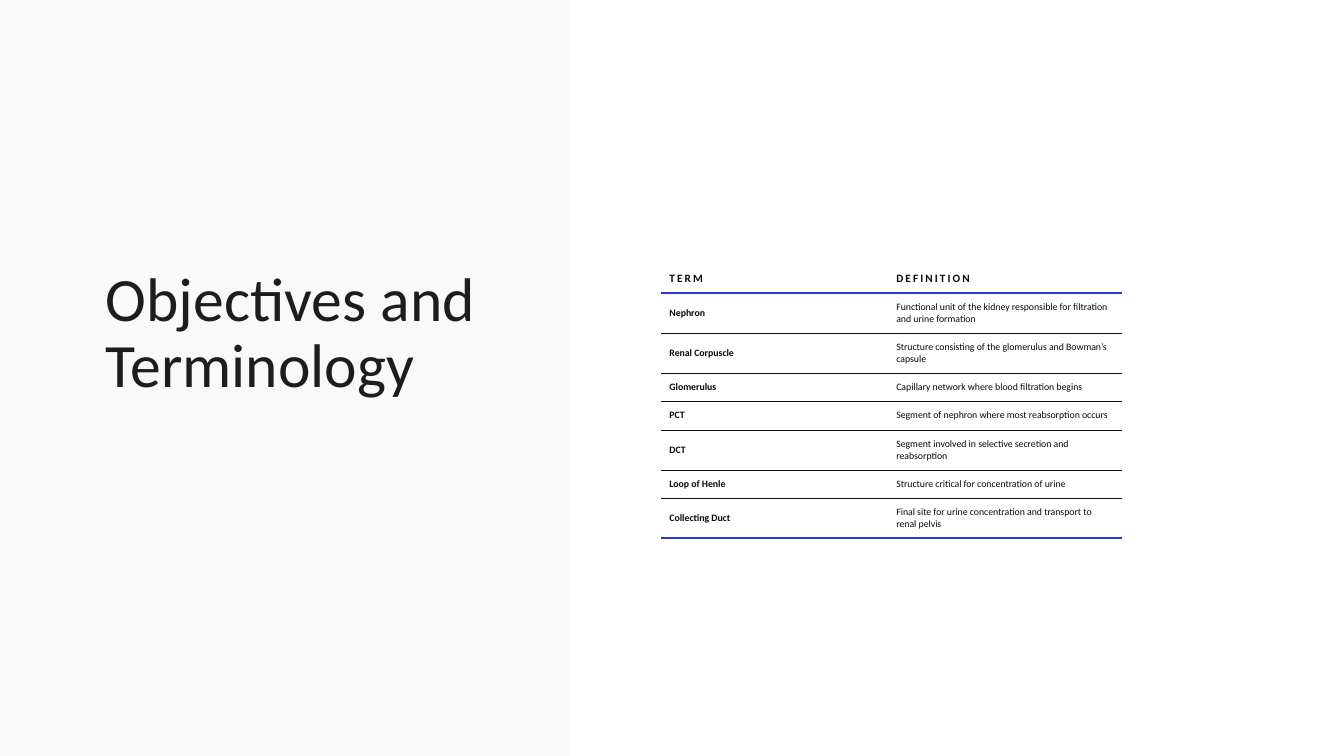
from lxml.etree import SubElement
from pptx import Presentation
from pptx.dml.color import RGBColor
from pptx.enum.shapes import MSO_SHAPE
from pptx.enum.text import MSO_ANCHOR, MSO_AUTO_SIZE, PP_ALIGN
from pptx.oxml import parse_xml
from pptx.oxml.ns import nsdecls, qn
from pptx.util import Inches, Pt

WHITE = RGBColor(0xFF, 0xFF, 0xFF)
MIST = RGBColor(0xF1, 0xF2, 0xF3)
CHARCOAL = RGBColor(0x1D, 0x1D, 0x1D)
INK = RGBColor(0x09, 0x09, 0x09)
BLUE = RGBColor(0x2A, 0x38, 0xD5)

FONT = "Calibri"
SLIDE_WIDTH, SLIDE_HEIGHT = 13.33, 7.5
PANEL_LEFT = 5.64
TITLE_BOX = (0.95, 2.61, 3.98, 2.8)
TABLE_BOX = (6.56, 2.61, 4.57, 2.7)
COLUMN_WIDTHS = (2.25, 2.32)
HEADER_HEIGHT, ONE_LINE, TWO_LINES = 0.3, 0.28, 0.39
CELL_INSET = 0.08

THICK_RULE = (BLUE, 1.5)
THIN_RULE = (INK, 0.5)

HEADER = ("TERM", "DEFINITION")
TERMS = [
    ("Nephron", "Functional unit of the kidney responsible for filtration and urine formation", TWO_LINES),
    ("Renal Corpuscle", "Structure consisting of the glomerulus and Bowman’s capsule", TWO_LINES),
    ("Glomerulus", "Capillary network where blood filtration begins", ONE_LINE),
    ("PCT", "Segment of nephron where most reabsorption occurs", ONE_LINE),
    ("DCT", "Segment involved in selective secretion and reabsorption", TWO_LINES),
    ("Loop of Henle", "Structure critical for concentration of urine", ONE_LINE),
    ("Collecting Duct", "Final site for urine concentration and transport to renal pelvis", TWO_LINES),
]


def inches(box):
    """Turn a box in inches into slide lengths."""
    return [Inches(length) for length in box]


def set_attributes(target, values):
    """Set every attribute named in the dict of values."""
    for name, value in values.items():
        setattr(target, name, value)


def write_text(frame, text, size, color, bold=False, spacing=0):
    """Write one formatted run into a text frame and return its paragraph."""
    para = frame.paragraphs[0]
    para.alignment = PP_ALIGN.LEFT
    span = para.add_run()
    span.text = text
    set_attributes(span.font, {"name": FONT, "size": Pt(size), "bold": bold})
    span.font.color.rgb = color
    if spacing:
        span.font._element.set("spc", str(int(spacing * 100)))
    return para


def add_panel(page, box, color, opacity=100):
    """Place a plain panel behind the title."""
    panel = page.shapes.add_shape(MSO_SHAPE.RECTANGLE, *inches(box))
    panel.shadow.inherit = False
    panel.line.fill.background()
    panel.fill.solid()
    panel.fill.fore_color.rgb = color
    if opacity < 100:
        shade = panel.element.spPr.find(".//" + qn("a:srgbClr"))
        SubElement(shade, qn("a:alpha"), val=str(opacity * 1000))
    page.shapes.title.element.addprevious(panel.element)


def fill_title(page, box, text):
    """Move the title placeholder into its box and write it."""
    title = page.shapes.title
    set_attributes(title, dict(zip(("left", "top", "width", "height"), inches(box))))
    frame = title.text_frame
    set_attributes(frame, {
        "word_wrap": True,
        "auto_size": MSO_AUTO_SIZE.NONE,
        "vertical_anchor": MSO_ANCHOR.TOP,
    })
    write_text(frame, text, 44, CHARCOAL).line_spacing = 0.9


def set_borders(cell, top, bottom):
    """Rule the top and bottom of a cell and leave its sides open."""
    properties = cell._tc.get_or_add_tcPr()
    rules = {"lnL": None, "lnR": None, "lnT": top, "lnB": bottom}
    for position, (tag, rule) in enumerate(rules.items()):
        if rule:
            color, width = rule
            paint = f'<a:solidFill><a:srgbClr val="{color}"/></a:solidFill>'
        else:
            width, paint = 0, "<a:noFill/>"
        line = f'<a:{tag} {nsdecls("a")} w="{Pt(width)}">{paint}</a:{tag}>'
        properties.insert(position, parse_xml(line))


def add_term_table(page, box):
    """Place the table of terms and definitions in its box."""
    table = page.shapes.add_table(len(TERMS) + 1, len(HEADER), *inches(box)).table
    set_attributes(table, {"first_row": False, "horz_banding": False})
    for column, width in zip(table.columns, COLUMN_WIDTHS):
        column.width = Inches(width)
    rows = [(*HEADER, HEADER_HEIGHT), *TERMS]
    rules = [None, THICK_RULE] + [THIN_RULE] * (len(TERMS) - 1) + [THICK_RULE]
    margins = ("margin_left", "margin_top", "margin_right", "margin_bottom")
    cell_format = dict.fromkeys(margins, Inches(CELL_INSET))
    cell_format["vertical_anchor"] = MSO_ANCHOR.MIDDLE
    for row_index, (*texts, height) in enumerate(rows):
        table.rows[row_index].height = Inches(height)
        is_header = row_index == 0
        for column_index, text in enumerate(texts):
            cell = table.cell(row_index, column_index)
            set_attributes(cell, cell_format)
            cell.fill.background()
            set_borders(cell, rules[row_index], rules[row_index + 1])
            write_text(cell.text_frame, text, 8 if is_header else 7, INK,
                       bold=is_header or column_index == 0,
                       spacing=1.5 if is_header else 0)


def main():
    """Build the terminology slide and save the deck."""
    deck = Presentation()
    set_attributes(deck, {
        "slide_width": Inches(SLIDE_WIDTH),
        "slide_height": Inches(SLIDE_HEIGHT),
    })
    page = deck.slides.add_slide(deck.slide_layouts[5])
    add_panel(page, (0, 0, SLIDE_WIDTH, SLIDE_HEIGHT), MIST, opacity=40)
    add_panel(page, (PANEL_LEFT, 0, SLIDE_WIDTH - PANEL_LEFT, SLIDE_HEIGHT), WHITE)
    fill_title(page, TITLE_BOX, "Objectives and Terminology")
    add_term_table(page, TABLE_BOX)
    deck.save("out.pptx")


if __name__ == "__main__":
    main()
